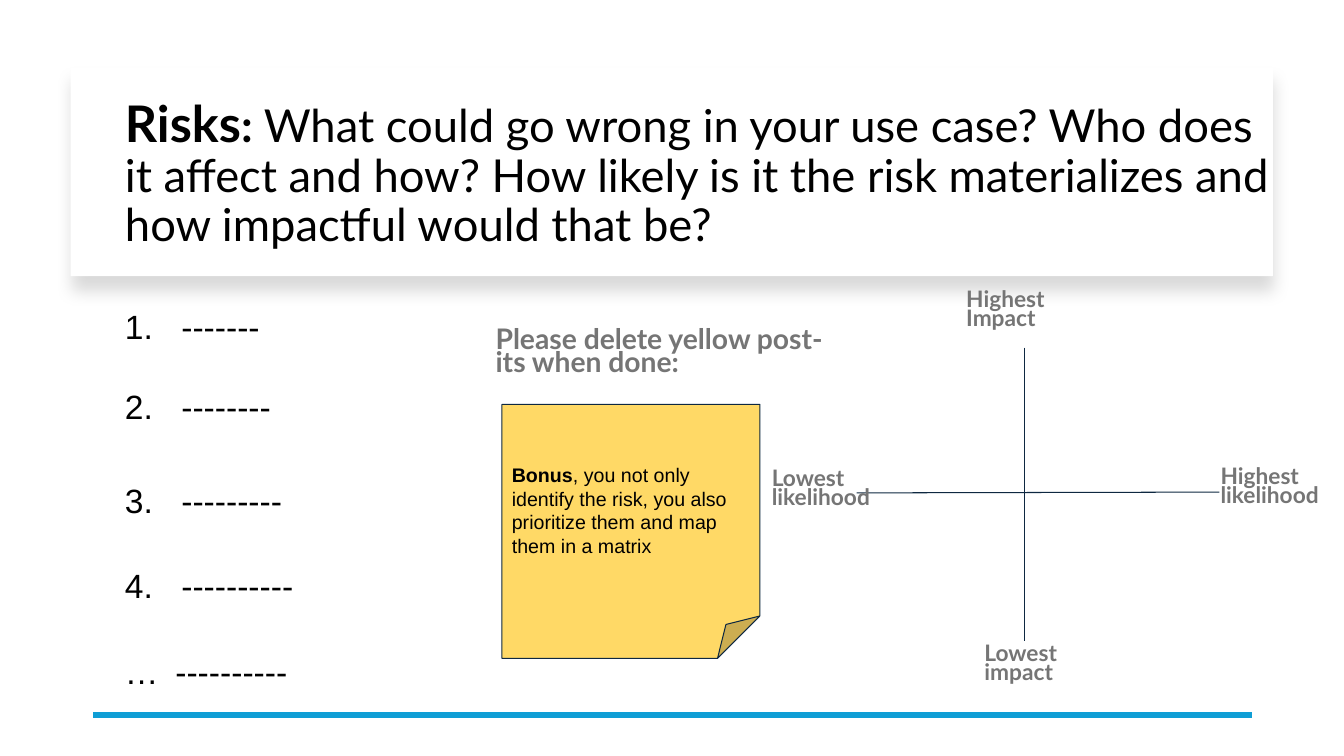
from dataclasses import dataclass

from lxml import etree
from pptx import Presentation
from pptx import util as u
from pptx.dml.color import RGBColor
from pptx.enum import shapes, text
from pptx.oxml import ns


@dataclass(frozen=True)
class Theme:
    heading: str = "Lato"
    body: str = "Arial"
    black: str = "000000"
    white: str = "FFFFFF"
    grey: str = "757575"
    navy: str = "0E2841"
    blue: str = "0F9ED5"
    yellow: str = "FFD966"
    lead_size: float = 36
    title_size: float = 32.4
    list_size: float = 24
    prompt_size: float = 20.2
    label_size: float = 16.2
    note_size: float = 14


THEME = Theme()


def add_node(parent, tag, **attributes):
    node = etree.SubElement(parent, ns.qn(tag))
    for name, value in attributes.items():
        node.set(name, str(value))
    return node


def place(box, left, top, width, height):
    box.left, box.top, box.width, box.height = map(u.Cm, (left, top, width, height))


def prepare_frame(box, inset=0.13):
    frame = box.text_frame
    frame.word_wrap = True
    frame.auto_size = text.MSO_AUTO_SIZE.NONE
    frame.vertical_anchor = text.MSO_ANCHOR.MIDDLE
    frame.margin_left = frame.margin_right = u.Cm(0.25)
    frame.margin_top = frame.margin_bottom = u.Cm(inset)
    return frame


def write(para, words, size, font=THEME.body, color=THEME.black, bold=False,
          spacing=1.0, before=0):
    para.alignment = text.PP_ALIGN.LEFT
    para.line_spacing = spacing
    para.space_before = u.Pt(before)
    span = para.add_run()
    span.text = words
    span.font.name = font
    span.font.size = u.Pt(size)
    span.font.bold = bold
    span.font.color.rgb = RGBColor.from_string(color)


def add_line(page, start, end, color, weight):
    line = page.shapes.add_connector(shapes.MSO_CONNECTOR.STRAIGHT,
                                     *map(u.Cm, (*start, *end)))
    line.line.color.rgb = RGBColor.from_string(color)
    line.line.width = u.Pt(weight)
    add_node(line._element.spPr, "a:effectLst")


def add_filled(page, preset, position, fill):
    box = page.shapes.add_shape(preset, *map(u.Cm, position))
    box.shadow.inherit = False
    box.fill.solid()
    box.fill.fore_color.rgb = RGBColor.from_string(fill)
    return box


def add_panel(page):
    panel = add_filled(page, shapes.MSO_SHAPE.RECTANGLE, (1.78, 1.7, 30.3, 5.26), THEME.white)
    panel.line.fill.background()
    effects = panel._element.spPr.find(ns.qn("a:effectLst"))
    shadow = add_node(effects, "a:outerShdw", blurRad=u.Pt(11), dist=u.Pt(10),
                      dir=90 * 60000, algn="t", rotWithShape=0)
    tint = add_node(shadow, "a:srgbClr", val=THEME.black)
    add_node(tint, "a:alpha", val=15000)
    # The panel goes behind the title
    page.shapes._spTree.insert(2, panel._element)


def add_title(page):
    title = page.shapes.title
    place(title, 2.9, 2.26, 29.79, 4.32)
    para = prepare_frame(title).paragraphs[0]
    question = ("What could go wrong in your use case? Who does it affect and how? "
                "How likely is it the risk materializes and how impactful would that be?")
    for words, size, bold in (("Risks", THEME.lead_size, True),
                              (": ", THEME.title_size, True),
                              (question, THEME.title_size, False)):
        write(para, words, size, font=THEME.heading, bold=bold, spacing=0.9)


def add_risk_list(page):
    box = page.placeholders[1]
    place(box, 2.9, 7.42, 29.51, 10.46)
    frame = prepare_frame(box)
    rows = (("-------", 0), ("--------", 34), ("---------", 44),
            ("----------", 38), ("…\t----------", 38))
    for index, (words, gap) in enumerate(rows):
        para = frame.add_paragraph() if index else frame.paragraphs[0]
        write(para, words, THEME.list_size, spacing=0.8, before=gap)
        numbered = not words.startswith("…")
        indent = u.Cm(1.42) if numbered else 0
        properties = para._p.get_or_add_pPr()
        properties.set("marL", str(indent))
        properties.set("indent", str(-indent))
        if numbered:
            add_node(properties, "a:buFont", typeface=THEME.body)
            add_node(properties, "a:buAutoNum", type="arabicPeriod")
        else:
            add_node(properties, "a:buNone")


def add_note(page):
    note = add_filled(page, shapes.MSO_SHAPE.FOLDED_CORNER, (12.65, 10.19, 6.5, 6.4),
                      THEME.yellow)
    note.line.color.rgb = RGBColor.from_string(THEME.navy)
    note.line.width = u.Pt(0.75)
    para = prepare_frame(note, inset=0.25).paragraphs[0]
    write(para, "Bonus", THEME.note_size, bold=True)
    write(para, ", you not only identify the risk, you also prioritize them "
                "and map them in a matrix", THEME.note_size)


def add_label(page, words, left, top, width=3.18, size=THEME.label_size):
    box = page.shapes.add_textbox(*map(u.Cm, (left, top, width, 3)))
    write(prepare_frame(box).paragraphs[0], words, size, font=THEME.heading,
          color=THEME.grey, bold=True, spacing=0.7)


def main():
    deck = Presentation()
    deck.slide_width, deck.slide_height = u.Cm(33.87), u.Cm(19.05)
    page = deck.slides.add_slide(deck.slide_layouts[1])

    # Heading and base rule
    add_panel(page)
    add_title(page)
    add_line(page, (31.55, 18.01), (2.34, 18.01), THEME.blue, 4.5)

    # Risks and sticky note
    add_risk_list(page)
    add_note(page)
    add_label(page, "Please delete yellow post-its when done:", 12.24, 7.42,
              width=8.94, size=THEME.prompt_size)

    # Impact and likelihood matrix
    add_line(page, (25.83, 8.76), (25.83, 16.15), THEME.navy, 0.75)
    add_line(page, (21.59, 12.42), (30.73, 12.4), THEME.navy, 0.75)
    for words, left, top in (("Highest Impact", 24.1, 6.35),
                             ("Highest likelihood", 30.51, 10.8),
                             ("Lowest likelihood", 19.2, 10.85),
                             ("Lowest impact", 24.56, 15.27)):
        add_label(page, words, left, top)

    deck.save("out.pptx")


if __name__ == "__main__":
    main()
